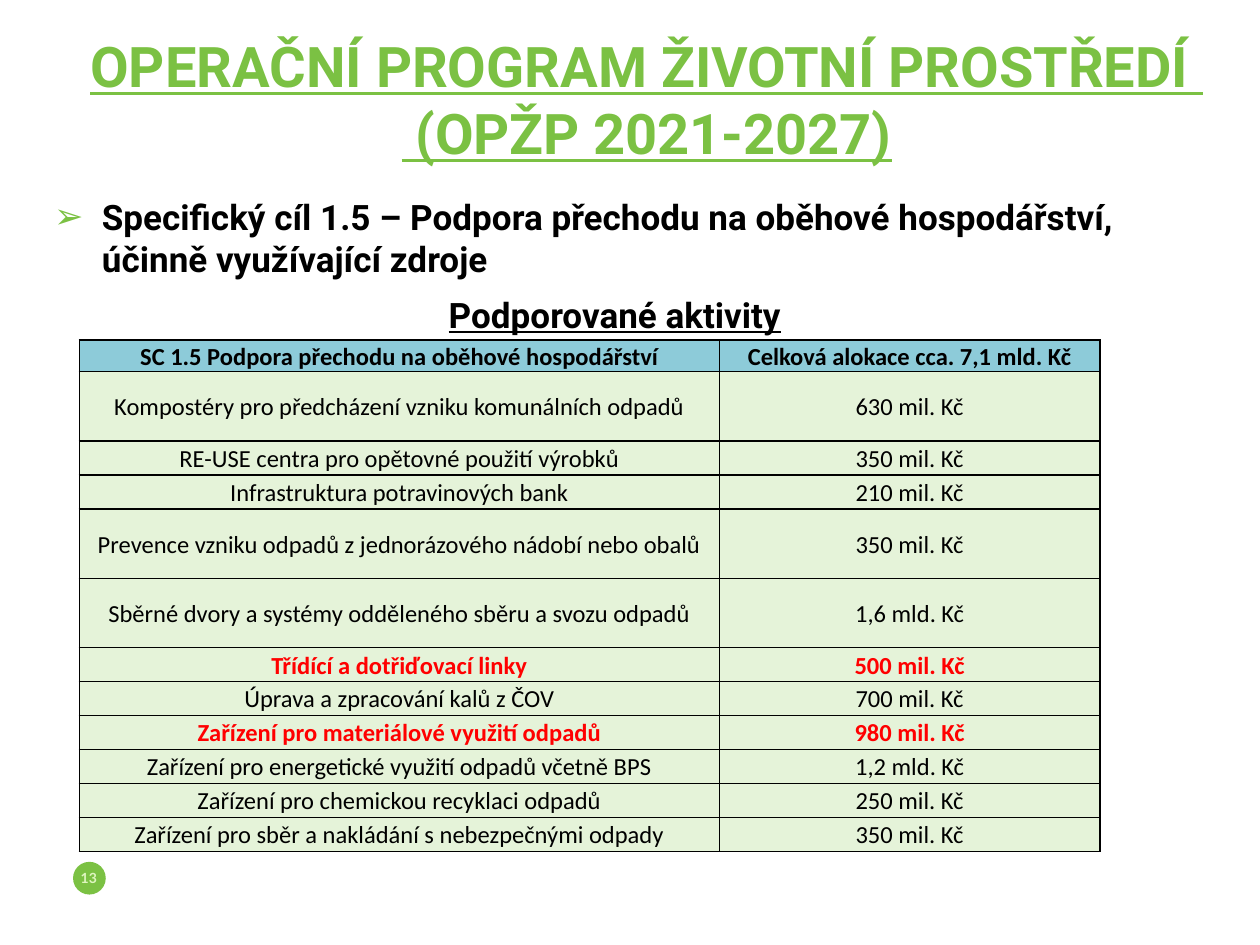
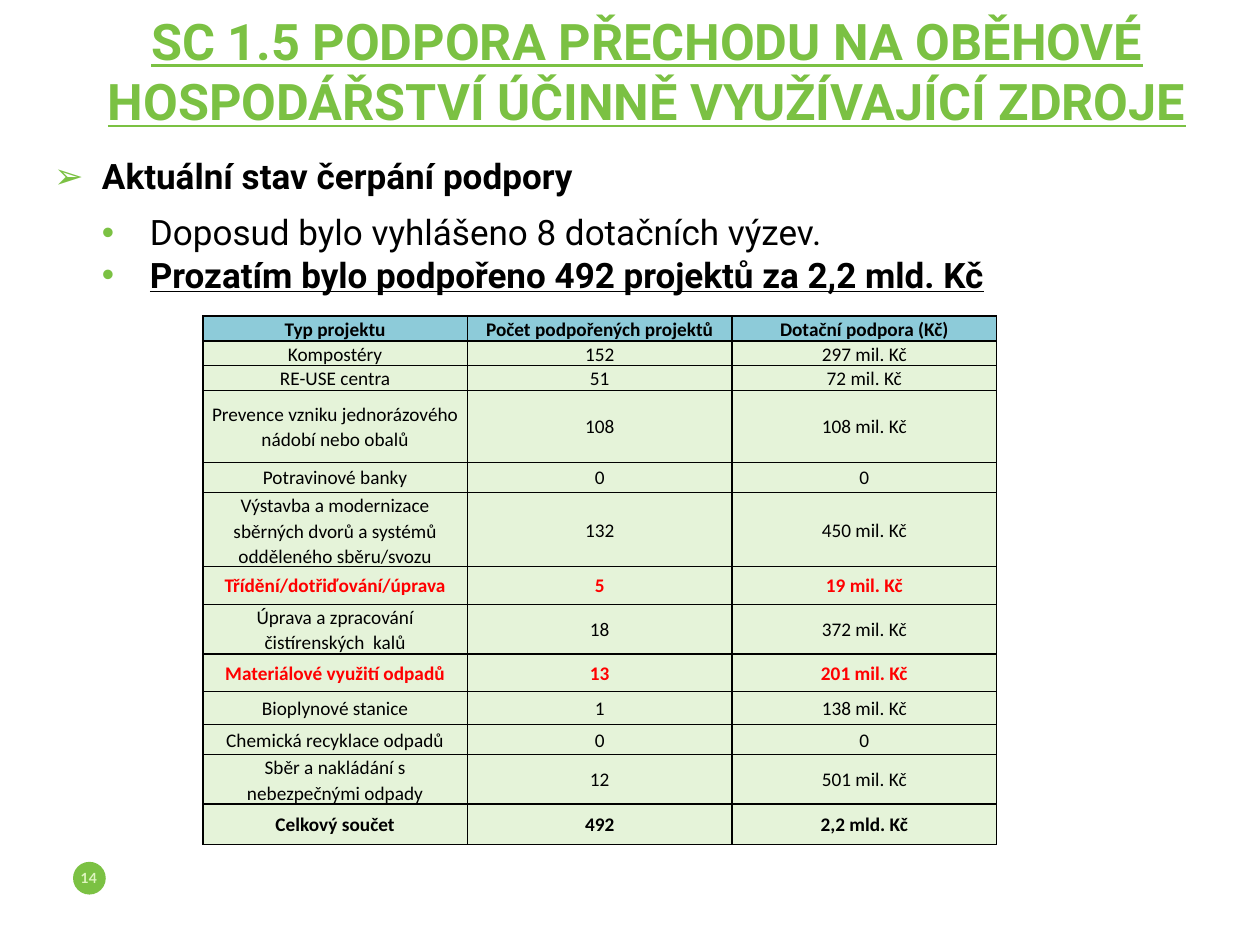
from lxml.etree import SubElement as Sub
from pptx import Presentation
from pptx.dml.color import RGBColor as Rgb
from pptx.enum.shapes import MSO_SHAPE as Kind
from pptx.enum.text import MSO_ANCHOR as Anchor, MSO_AUTO_SIZE as Fit, PP_ALIGN as Align
from pptx.oxml.ns import qn
from pptx.util import Inches, Pt

GREEN = Rgb(0x7B, 0xC1, 0x43)
PALE = Rgb(0xDF, 0xF5, 0xC0)
MINT = Rgb(0xE5, 0xF3, 0xD9)
TEAL = Rgb(0x8D, 0xCB, 0xD9)
BLACK = Rgb(0, 0, 0)
RED = Rgb(0xFF, 0, 0)
HEAD, CELL, NUM = "Roboto", "Calibri", "Lato"
LEFT = 0.43

GOALS = [
    ("SC 1.5 Podpora přechodu na oběhové hospodářství", "Celková alokace cca. 7,1 mld. Kč"),
    ("Kompostéry pro předcházení vzniku komunálních odpadů", "630 mil. Kč"),
    ("RE-USE centra pro opětovné použití výrobků", "350 mil. Kč"),
    ("Infrastruktura potravinových bank", "210 mil. Kč"),
    ("Prevence vzniku odpadů z jednorázového nádobí nebo obalů", "350 mil. Kč"),
    ("Sběrné dvory a systémy odděleného sběru a svozu odpadů", "1,6 mld. Kč"),
    ("Třídící a dotřiďovací linky", "500 mil. Kč"),
    ("Úprava a zpracování kalů z ČOV", "700 mil. Kč"),
    ("Zařízení pro materiálové využití odpadů", "980 mil. Kč"),
    ("Zařízení pro energetické využití odpadů včetně BPS", "1,2 mld. Kč"),
    ("Zařízení pro chemickou recyklaci odpadů", "250 mil. Kč"),
    ("Zařízení pro sběr a nakládání s nebezpečnými odpady", "350 mil. Kč"),
]
STATE = [
    ("Typ projektu", "Počet podpořených projektů", "Dotační podpora (Kč)"),
    ("Kompostéry", "152", "297 mil. Kč"),
    ("RE-USE centra", "51", "72 mil. Kč"),
    ("Prevence vzniku jednorázového nádobí nebo obalů", "108", "108 mil. Kč"),
    ("Potravinové banky", "0", "0"),
    ("Výstavba a modernizace sběrných dvorů a systémů odděleného sběru/svozu", "132", "450 mil. Kč"),
    ("Třídění/dotřiďování/úprava", "5", "19 mil. Kč"),
    ("Úprava a zpracování čistírenských  kalů", "18", "372 mil. Kč"),
    ("Materiálové využití odpadů", "13", "201 mil. Kč"),
    ("Bioplynové stanice", "1", "138 mil. Kč"),
    ("Chemická recyklace odpadů", "0", "0"),
    ("Sběr a nakládání s nebezpečnými odpady", "12", "501 mil. Kč"),
    ("Celkový součet", "492", "2,2 mld. Kč"),
]


class Deck:
    """Holds the shared style and the current slide."""

    def __init__(self):
        self.prs = Presentation()
        self.prs.slide_width, self.prs.slide_height = Inches(10), Inches(7.5)

    def start(self, num):
        self.slide = self.prs.slides.add_slide(self.prs.slide_layouts[5])
        dot = self.slide.shapes.add_shape(Kind.OVAL, *map(Inches, (0.58, 6.84, 0.26, 0.26)))
        dot.shadow.inherit = False
        dot.fill.solid()
        dot.fill.fore_color.rgb = GREEN
        dot.line.fill.background()
        box = self.slide.shapes.add_textbox(*map(Inches, (0.51, 6.85, 0.39, 0.24)))
        box.text_frame.word_wrap = True
        para = box.text_frame.paragraphs[0]
        para.alignment = Align.CENTER
        self.run(para, str(num), 8, NUM, PALE, True)

    def run(self, para, text, size, font, color, bold=False, under=False):
        run = para.add_run()
        run.text = text
        run.font.size, run.font.name = Pt(size), font
        run.font.bold, run.font.underline = bold, under
        run.font.color.rgb = color

    def frame(self, shape, top, width, height):
        shape.left, shape.top = Inches(LEFT), Inches(top)
        shape.width, shape.height = Inches(width), Inches(height)
        frame = shape.text_frame
        frame.margin_left = frame.margin_right = frame.margin_top = frame.margin_bottom = 0
        frame.word_wrap, frame.auto_size = True, Fit.NONE
        return frame

    def title(self, lines, top, height, size):
        frame = self.frame(self.slide.shapes.title, top, 9.41, height)
        frame.vertical_anchor = Anchor.MIDDLE
        para = frame.paragraphs[0]
        para.alignment = Align.CENTER
        for i, line in enumerate(lines):
            if i:
                para.add_line_break()
            self.run(para, line, size, HEAD, GREEN, True, True)

    def body(self, top, height):
        box = self.slide.shapes.add_textbox(0, 0, 0, 0)
        self.text = self.frame(box, top, 8.9, height)
        self.fresh = True

    def para(self, text, mark=None, level=0, after=8, bold=True, under=False):
        para = self.text.paragraphs[0] if self.fresh else self.text.add_paragraph()
        self.fresh = False
        para.space_after = Pt(after)
        if mark:
            para.level = level
            props = para._p.get_or_add_pPr()
            props.set("marL", str(Inches(0.38 * (level + 1))))
            props.set("indent", str(-Inches(0.38)))
            Sub(Sub(props, qn("a:buClr")), qn("a:srgbClr"), val=str(GREEN))
            Sub(props, qn("a:buFont"), typeface="Arial")
            Sub(props, qn("a:buChar"), char=mark)
        else:
            para.alignment = Align.CENTER
        self.run(para, text, 20, HEAD, BLACK, bold, under)

    def cell(self, cell, text, size, pad, fill, color, bold):
        props = cell._tc.get_or_add_tcPr()
        for side in "LRTB":
            line = Sub(props, qn("a:ln" + side), w=str(Pt(1)))
            Sub(Sub(line, qn("a:solidFill")), qn("a:srgbClr"), val=str(BLACK))
        cell.fill.solid()
        cell.fill.fore_color.rgb = fill
        cell.margin_left = cell.margin_right = Inches(pad)
        cell.margin_top = cell.margin_bottom = 0
        cell.vertical_anchor = Anchor.MIDDLE
        para = cell.text_frame.paragraphs[0]
        para.alignment, para.line_spacing = Align.CENTER, 1.07
        self.run(para, text, size, CELL, color, bold)

    def table(self, data, left, top, cols, rows, size, pad, hot, total=()):
        shape = self.slide.shapes.add_table(
            len(rows), len(cols), *map(Inches, (left, top, sum(cols), sum(rows))))
        grid = shape.table
        grid.first_row = grid.horz_banding = False
        for col, width in zip(grid.columns, cols):
            col.width = Inches(width)
        for r, (row, height) in enumerate(zip(data, rows)):
            grid.rows[r].height = Inches(height)
            fill = MINT if r else TEAL
            color = RED if r in hot else BLACK
            bold = r == 0 or r in hot or r in total
            for c, text in enumerate(row):
                self.cell(grid.cell(r, c), text, size, pad, fill, color, bold)


def main():
    deck = Deck()

    deck.start(13)
    deck.body(1.55, 5.2)
    deck.para("Specifický cíl 1.5 – Podpora přechodu na oběhové hospodářství, "
              "účinně využívající zdroje", "➢")
    deck.para("Podporované aktivity", under=True)
    deck.title(["OPERAČNÍ PROGRAM ŽIVOTNÍ PROSTŘEDÍ ", " (OPŽP 2021-2027)"], 0.21, 1.15, 32)
    tall = (1, 4, 5)
    rows = [0.13] + [0.55 if r in tall else 0.27 for r in range(1, len(GOALS))]
    deck.table(GOALS, 0.63, 2.7, [5.08, 3.02], rows, 14, 0.08, hot=(6, 8))

    deck.start(14)
    deck.body(1.23, 5.51)
    deck.para("Aktuální stav čerpání podpory", "➢")
    deck.para("Doposud bylo vyhlášeno 8 dotačních výzev.", "•", 1, 0, bold=False)
    deck.para("Prozatím bylo podpořeno 492 projektů za 2,2 mld. Kč", "•", 1, 0, under=True)
    deck.title(["SC 1.5 PODPORA PŘECHODU NA OBĚHOVÉ HOSPODÁŘSTVÍ ÚČINNĚ VYUŽÍVAJÍCÍ ZDROJE"],
               0.05, 1.02, 28.8)
    rows = [0.19] * 3 + [0.57, 0.24, 0.57, 0.3, 0.38, 0.3, 0.26, 0.24, 0.38, 0.32]
    deck.table(STATE, 1.61, 2.51, [2.1] * 3, rows, 11, 0.07, hot=(6, 8), total=(12,))

    deck.prs.save("out.pptx")


if __name__ == "__main__":
    main()
